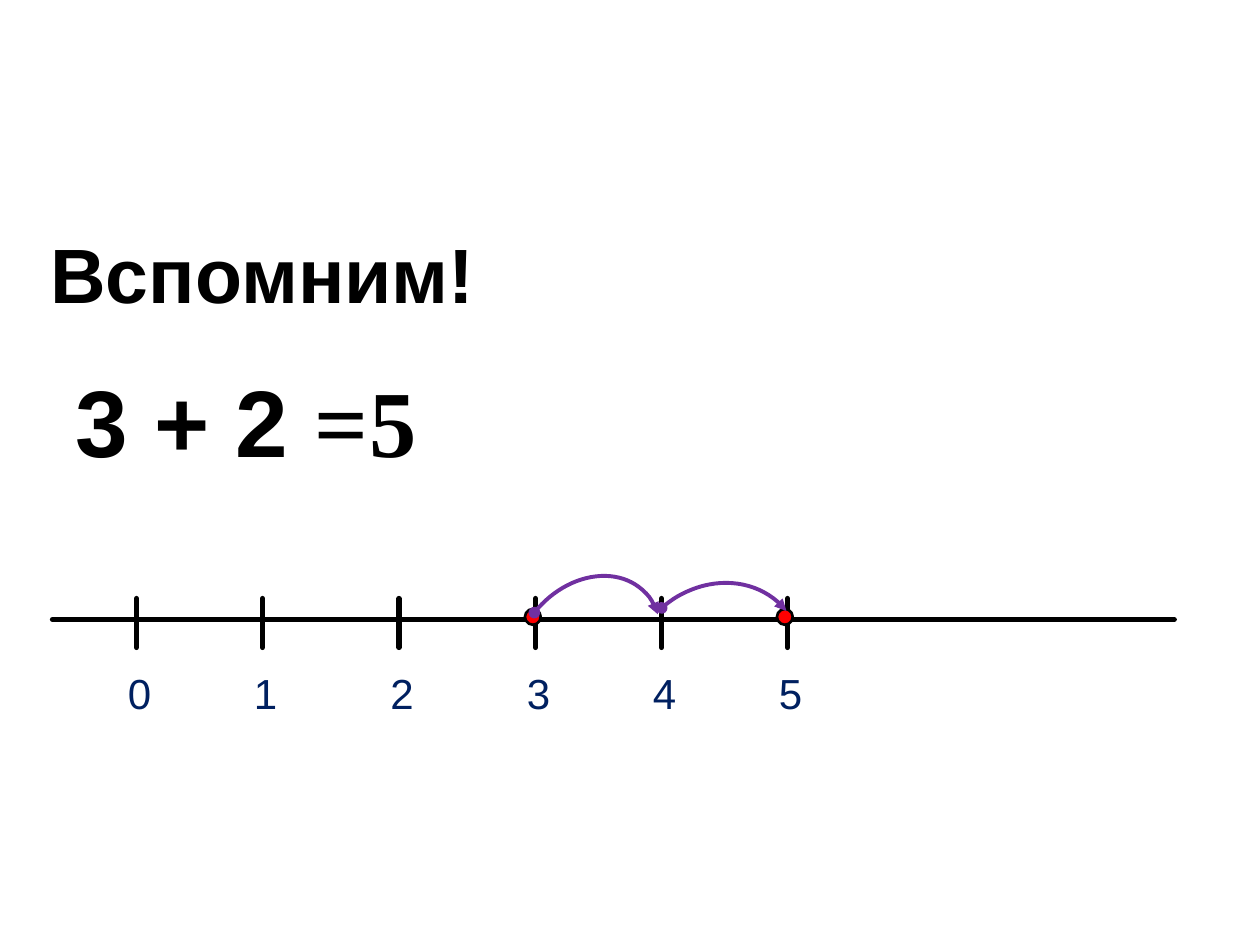
from dataclasses import dataclass

from lxml import etree
from pptx import Presentation
from pptx import util as u
from pptx.dml.color import RGBColor
from pptx.enum import shapes, text
from pptx.oxml import ns

BLACK = RGBColor(0, 0, 0)
RED = RGBColor(0xFF, 0, 0)
NAVY = RGBColor(0, 0x20, 0x60)
PURPLE = RGBColor(0x70, 0x30, 0xA0)
AXIS_Y = 354


@dataclass
class Box:
    left: float
    top: float
    width: float
    height: float

    def lengths(self) -> tuple:
        return tuple(u.Pt(value) for value in (self.left, self.top, self.width, self.height))


@dataclass
class Lettering:
    size: float
    color: RGBColor
    bold: bool
    fonts: tuple


@dataclass
class Jump:
    box: Box
    start: float
    end: float


TICKS = (78, 150, 228, 306, 378, 450)
DOTTED_NUMBERS = (3, 5)
JUMPS = (
    Jump(Box(288, 335, 95, 75), 159.23, 12.44),
    Jump(Box(353.5, 337, 109.5, 96), 168.01, 4.59),
)


def add_text(slide, box: Box, parts: tuple, lettering: Lettering, align=text.PP_ALIGN.LEFT,
             anchor=text.MSO_ANCHOR.TOP) -> None:
    frame = slide.shapes.add_textbox(*box.lengths()).text_frame
    frame.word_wrap = True
    frame.vertical_anchor = anchor
    paragraph = frame.paragraphs[0]
    paragraph.alignment = align
    for part, font_name in zip(parts, lettering.fonts):
        run = paragraph.add_run()
        run.text = part
        run.font.name = font_name
        run.font.size = u.Pt(lettering.size)
        run.font.bold = lettering.bold
        run.font.color.rgb = lettering.color


def add_line(slide, start: tuple, end: tuple) -> None:
    line = slide.shapes.add_connector(
        shapes.MSO_CONNECTOR.STRAIGHT, *(u.Pt(value) for value in start + end))
    line.line.color.rgb = BLACK
    line.line.width = u.Pt(3)
    line.line._get_or_add_ln().set("cap", "rnd")
    etree.SubElement(line._element.spPr, ns.qn("a:effectLst"))


def add_dot(slide, box: Box) -> None:
    dot = slide.shapes.add_shape(shapes.MSO_SHAPE.FLOWCHART_CONNECTOR, *box.lengths())
    dot.shadow.inherit = False
    dot.fill.solid()
    dot.fill.fore_color.rgb = RED
    dot.line.color.rgb = BLACK
    dot.line.width = u.Pt(1.5)


def add_jump(slide, jump: Jump) -> None:
    arc = slide.shapes.add_shape(shapes.MSO_SHAPE.ARC, *jump.box.lengths())
    arc.adjustments[0] = jump.start
    arc.adjustments[1] = jump.end
    arc.rotation = 311.3
    arc.shadow.inherit = False
    arc.fill.background()
    arc.line.color.rgb = PURPLE
    arc.line.width = u.Pt(2.25)
    outline = arc.line._get_or_add_ln()
    for tag, kind in (("a:headEnd", "oval"), ("a:tailEnd", "triangle")):
        etree.SubElement(outline, ns.qn(tag)).set("type", kind)


def main() -> None:
    presentation = Presentation()
    presentation.slide_width = u.Pt(720)
    presentation.slide_height = u.Pt(540)
    slide = presentation.slides.add_slide(presentation.slide_layouts[6])

    add_text(slide, Box(18, 126, 264, 60), ("Вспомним!",),
             Lettering(44, BLACK, True, ("Arial",)),
             text.PP_ALIGN.CENTER, text.MSO_ANCHOR.MIDDLE)
    add_text(slide, Box(36, 204, 222, 72), ("3 + 2 ", "="),
             Lettering(54, BLACK, True, ("Arial", "Times New Roman")))

    add_line(slide, (30, AXIS_Y), (671, AXIS_Y))
    for number, x in enumerate(TICKS):
        add_line(slide, (x, 342), (x, 370))
        add_text(slide, Box(x - 12, 378, 28, 36), (str(number),),
                 Lettering(24, NAVY, False, ("Arial",)))
    for number in DOTTED_NUMBERS:
        add_dot(slide, Box(TICKS[number] - 6, AXIS_Y - 6, 9, 9))
    for jump in JUMPS:
        add_jump(slide, jump)

    add_text(slide, Box(204, 204, 66, 73), ("5",),
             Lettering(54, BLACK, True, ("Times New Roman",)))
    presentation.save("out.pptx")


if __name__ == "__main__":
    main()
